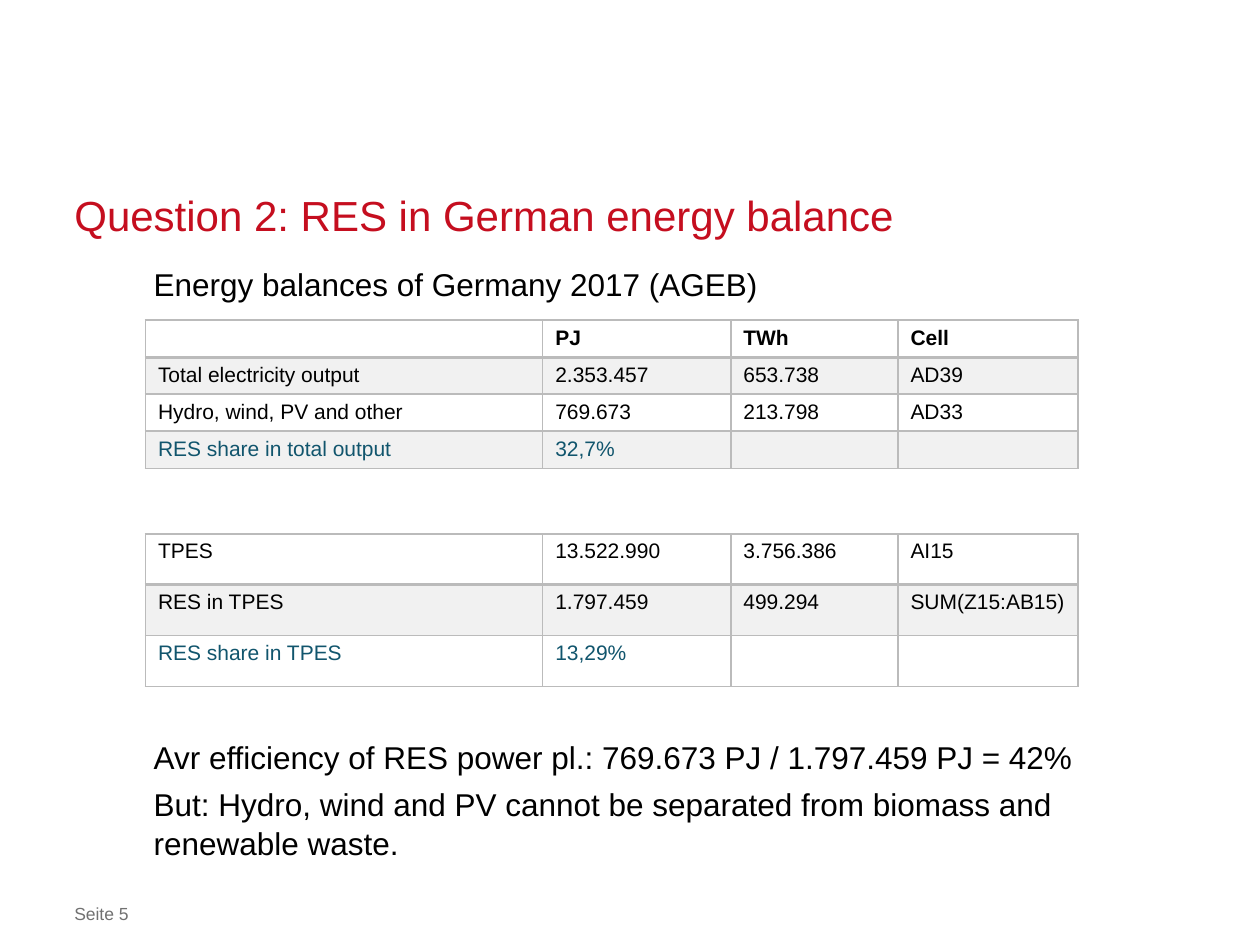
import pptx
import pptx.util
import pptx.dml.color
import pptx.enum.text
from lxml import etree

Pt = pptx.util.Pt
ANCHOR = pptx.enum.text.MSO_ANCHOR
NS = "http://schemas.openxmlformats.org/drawingml/2006/main"
BLACK, RED, TEAL, GRAY = "000000", "C50E1F", "11556D", "717171"
LINE, BAND = "BBBBBB", "F1F1F1"

# Content: paragraphs, left, top, width, height, format
TEXTS = [
    (["Seite 5"], 42.5, 516.2, 521, 12.5, dict(size=10, color=GRAY)),
    (["Question 2: RES in German energy balance"], 42.5, 108.7, 635, 28.1,
     dict(size=24, color=RED, lead=30, anchor=ANCHOR.BOTTOM)),
    (["Energy balances of Germany 2017 (AGEB)"], 87.8, 151.2, 533, 22,
     dict(size=18, lead=22)),
    (["Avr efficiency of RES power pl.: 769.673 PJ / 1.797.459 PJ = 42%",
      "But: Hydro, wind and PV cannot be separated from biomass and "
      "renewable waste."], 87.8, 421.2, 533, 71,
     dict(size=18, lead=22, gap=5)),
]
WIDTHS = [227, 107.5, 95.5, 103]
OUTPUT = [
    ["", "PJ", "TWh", "Cell"],
    ["Total electricity output", "2.353.457", "653.738", "AD39"],
    ["Hydro, wind, PV and other", "769.673", "213.798", "AD33"],
    ["RES share in total output", "32,7%", "", ""],
]
SUPPLY = [
    ["TPES", "13.522.990", "3.756.386", "AI15"],
    ["RES in TPES", "1.797.459", "499.294", "SUM(Z15:AB15)"],
    ["RES share in TPES", "13,29%", "", ""],
]
# Rows, left, top, row height, bold first row
TABLES = [(OUTPUT, 83.1, 182.9, 20.7, True), (SUPPLY, 83.1, 305.1, 29.1, False)]


def rgb(code):
    return pptx.dml.color.RGBColor.from_string(code)


def write(frame, lines, size=12, color=BLACK, bold=False, lead=None, gap=0,
          anchor=ANCHOR.TOP):
    frame.word_wrap = True
    frame.vertical_anchor = anchor
    for i, text in enumerate(lines):
        para = frame.add_paragraph() if i else frame.paragraphs[0]
        if lead:
            para.line_spacing = Pt(lead)
        if i and gap:
            para.space_before = Pt(gap)
        if not text:  # an empty cell keeps the row's text size
            etree.SubElement(para._p, f"{{{NS}}}endParaRPr", sz=str(size * 100))
            continue
        run = para.add_run()
        run.text = text
        run.font.name, run.font.size, run.font.bold = "Arial", Pt(size), bold
        run.font.color.rgb = rgb(color)


def border(cell, row):
    props = cell._tc.get_or_add_tcPr()
    # The rule under the first row is thicker
    sides = {"L": 1, "R": 1, "T": 2 if row == 1 else 1, "B": 2 if row == 0 else 1}
    for side, width in sides.items():
        line = etree.SubElement(props, f"{{{NS}}}ln{side}", w=str(Pt(width)))
        fill = etree.SubElement(line, f"{{{NS}}}solidFill")
        etree.SubElement(fill, f"{{{NS}}}srgbClr", val=LINE)


def grid(slide, rows, left, top, height, head):
    table = slide.shapes.add_table(
        len(rows), len(WIDTHS), Pt(left), Pt(top),
        Pt(sum(WIDTHS)), Pt(height * len(rows))).table
    table.first_row, table.horz_banding = head, False
    for col, width in zip(table.columns, WIDTHS):
        col.width = Pt(width)
    for r, row in enumerate(rows):
        table.rows[r].height = Pt(height)
        for c, text in enumerate(row):
            cell = table.cell(r, c)
            cell.margin_left, cell.margin_right = Pt(7.2), Pt(3)
            cell.margin_top = cell.margin_bottom = Pt(3.4)
            border(cell, r)
            if r % 2:
                cell.fill.solid()
                cell.fill.fore_color.rgb = rgb(BAND)
            else:
                cell.fill.background()
            write(cell.text_frame, [text], bold=head and r == 0,
                  color=TEAL if r == len(rows) - 1 else BLACK)


def main():
    deck = pptx.Presentation()
    deck.slide_width, deck.slide_height = Pt(720), Pt(540)
    slide = deck.slides.add_slide(deck.slide_layouts[6])

    # Footer, title and body text
    for lines, left, top, width, height, style in TEXTS:
        frame = slide.shapes.add_textbox(
            Pt(left), Pt(top), Pt(width), Pt(height)).text_frame
        frame.margin_left = frame.margin_right = 0
        frame.margin_top = frame.margin_bottom = 0
        write(frame, lines, **style)

    # Energy tables
    for spec in TABLES:
        grid(slide, *spec)
    deck.save("out.pptx")


if __name__ == "__main__":
    main()
